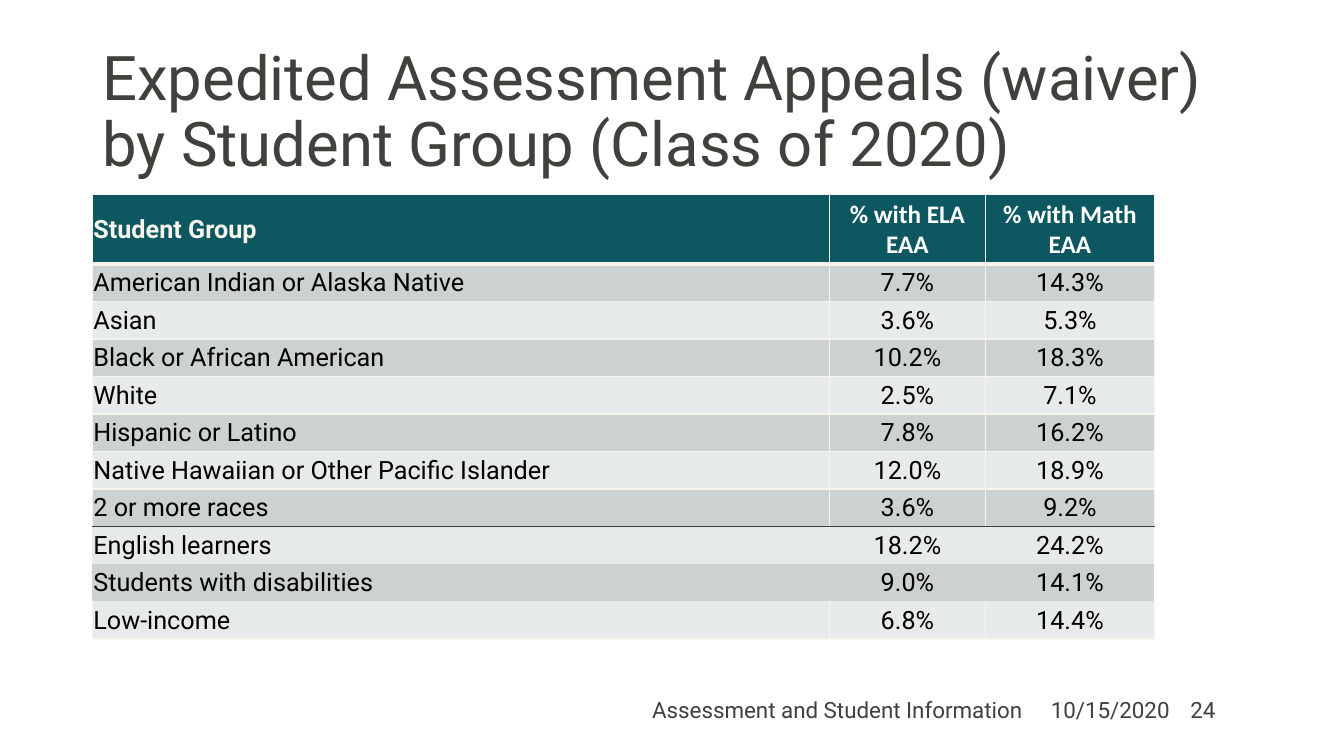
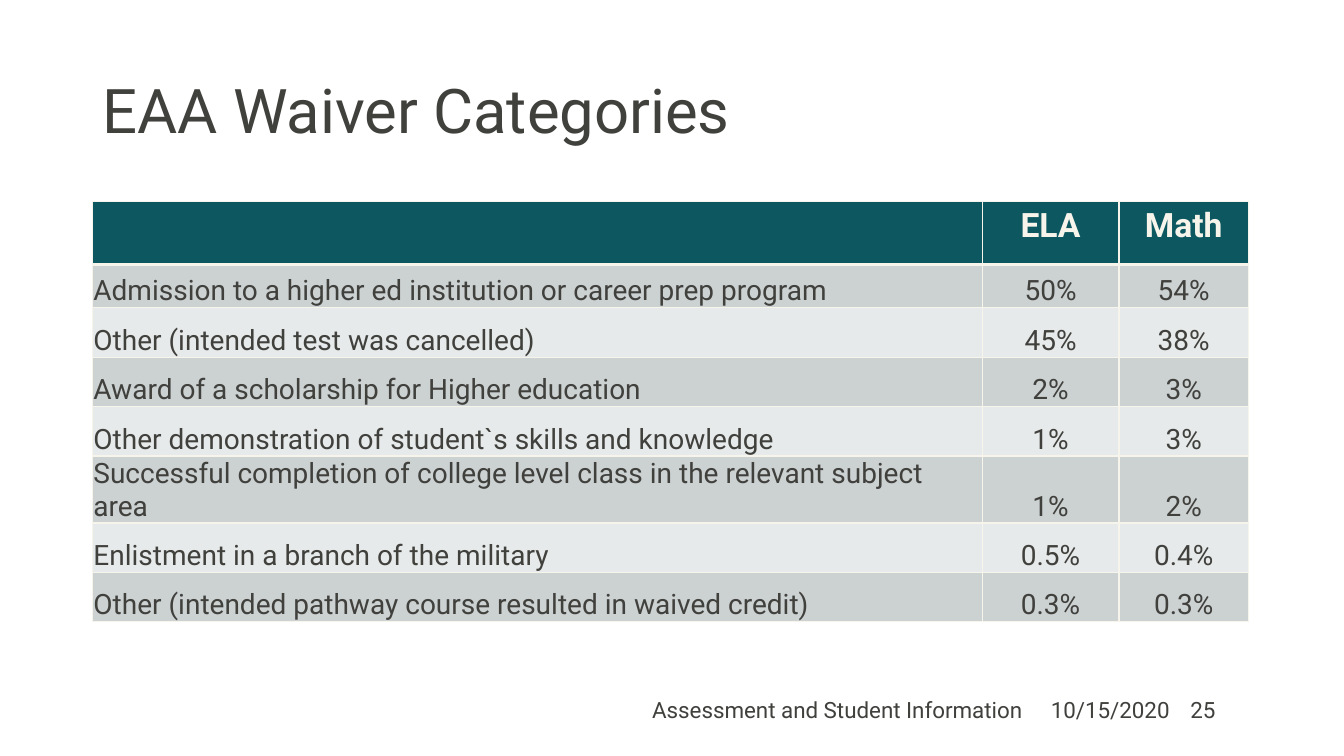
from dataclasses import dataclass
from typing import Optional

from lxml.etree import SubElement
from pptx import Presentation
from pptx.dml.color import RGBColor
from pptx.enum.text import MSO_ANCHOR, MSO_AUTO_SIZE, PP_ALIGN
from pptx.oxml.ns import qn
from pptx.util import Pt

INK = RGBColor(0x40, 0x40, 0x3D)
BLACK = RGBColor(0, 0, 0)
WHITE = RGBColor(0xFF, 0xFF, 0xFF)
CREAM = RGBColor(0xF7, 0xF5, 0xEB)
TEAL = RGBColor(0x0D, 0x57, 0x61)
BANDS = (RGBColor(0xCC, 0xD1, 0xD2), RGBColor(0xE7, 0xEA, 0xEA))
FONT = "Roboto"
LEFT = 66


@dataclass(frozen=True)
class Style:
    size: float
    color: RGBColor
    bold: bool = False
    font: str = FONT


@dataclass(frozen=True)
class Rule:
    width: float
    color: RGBColor = CREAM


@dataclass(frozen=True)
class Label:
    left: float
    width: float
    align: PP_ALIGN
    text: str


@dataclass(frozen=True)
class Grid:
    top: float
    cols: tuple[float, ...]
    heights: tuple[float, ...]
    rows: tuple[tuple[str, ...], ...]
    heads: tuple[Style, ...]
    body: Style
    anchor: MSO_ANCHOR
    tight: bool  # header cells share the narrow insets and anchor of the body
    split: Optional[int] = None  # first row below the dark rule


@dataclass(frozen=True)
class Page:
    number: int
    title: str
    grid: Grid


THIN, THICK, DARK = Rule(1), Rule(3), Rule(1, INK)
TITLE = Style(44, INK)
NOTE = Style(16, INK)
FOOTER = (
    Label(733, 120, PP_ALIGN.CENTER, "10/15/2020"),
    Label(279.4, 458, PP_ALIGN.RIGHT, "Assessment and Student Information"),
)

GROUPS = Grid(
    top=139,
    cols=(526.3, 111.8, 120.4),
    heights=(49.5,) + (26.8,) * 10,
    rows=(
        ("Student Group", "% with ELA EAA", "% with Math EAA"),
        ("American Indian or Alaska Native", "7.7%", "14.3%"),
        ("Asian", "3.6%", "5.3%"),
        ("Black or African American", "10.2%", "18.3%"),
        ("White", "2.5%", "7.1%"),
        ("Hispanic or Latino", "7.8%", "16.2%"),
        ("Native Hawaiian or Other Pacific Islander", "12.0%", "18.9%"),
        ("2 or more races", "3.6%", "9.2%"),
        ("English learners", "18.2%", "24.2%"),
        ("Students with disabilities", "9.0%", "14.1%"),
        ("Low-income", "6.8%", "14.4%"),
    ),
    heads=(Style(18, CREAM, True),) + (Style(18, WHITE, True, "Calibri"),) * 2,
    body=Style(18, BLACK),
    anchor=MSO_ANCHOR.MIDDLE,
    tight=True,
    split=8,
)
REASONS = Grid(
    top=144,
    cols=(635.6, 97.7, 92.6),
    heights=(45, 30.9, 35.3, 35.3, 35.3, 32.4, 35.3, 35.3),
    rows=(
        ("", "ELA", "Math"),
        ("Admission to a higher ed institution or career prep program", "50%", "54%"),
        ("Other (intended test was cancelled)", "45%", "38%"),
        ("Award of a scholarship for Higher education", "2%", "3%"),
        ("Other demonstration of student`s skills and knowledge", "1%", "3%"),
        ("Successful completion of college level class in the relevant subject area",
         "1%", "2%"),
        ("Enlistment in a branch of the military", "0.5%", "0.4%"),
        ("Other (intended pathway course resulted in waived credit)", "0.3%", "0.3%"),
    ),
    heads=(Style(24, CREAM, True),) * 3,
    body=Style(20, INK),
    anchor=MSO_ANCHOR.BOTTOM,
    tight=False,
)
PAGES = (
    Page(24, "Expedited Assessment Appeals (waiver) by Student Group (Class of 2020)",
         GROUPS),
    Page(25, "EAA Waiver Categories", REASONS),
)


def write(frame, text: str, style: Style, align: PP_ALIGN = PP_ALIGN.LEFT):
    """Put one styled run in the first paragraph and return that paragraph."""
    para = frame.paragraphs[0]
    para.alignment = align
    if text:
        run = para.add_run()
        run.text = text
        font = run.font
        font.name, font.size, font.bold = style.font, Pt(style.size), style.bold
        font.color.rgb = style.color
    return para


def place(shape, left: float, top: float, width: float, height: float) -> None:
    shape.left, shape.top = Pt(left), Pt(top)
    shape.width, shape.height = Pt(width), Pt(height)


def add_title(slide, text: str) -> None:
    title = slide.shapes.title
    place(title, LEFT, 28.8, 828, 104.4)
    frame = title.text_frame
    frame.word_wrap, frame.auto_size = True, MSO_AUTO_SIZE.NONE
    frame.vertical_anchor = MSO_ANCHOR.MIDDLE
    write(frame, text, TITLE).line_spacing = 0.9


def add_label(slide, label: Label) -> None:
    box = slide.shapes.add_textbox(Pt(label.left), Pt(492.5), Pt(label.width), Pt(28.8))
    frame = box.text_frame
    frame.word_wrap = True
    frame.vertical_anchor = MSO_ANCHOR.MIDDLE
    write(frame, label.text, NOTE, label.align)


def edge(cell, rules: dict[str, Optional[Rule]]) -> None:
    """Draw the cell borders; a side without a rule is left blank."""
    props = cell._tc.get_or_add_tcPr()
    for spot, side in enumerate("LRTB"):
        rule = rules[side]
        line = SubElement(props, qn(f"a:ln{side}"))
        if rule:
            line.set("w", str(Pt(rule.width)))
            fill = SubElement(line, qn("a:solidFill"))
            SubElement(fill, qn("a:srgbClr")).set("val", str(rule.color))
        else:
            line.set("w", "0")
            SubElement(line, qn("a:noFill"))
        props.insert(spot, line)


def row_rules(grid: Grid) -> list[Optional[Rule]]:
    """List the horizontal rules from the top of the table to its foot."""
    rules: list[Optional[Rule]] = [THIN, THICK] + [THIN] * (len(grid.rows) - 1)
    if grid.split:
        rules[grid.split] = DARK
        for row in range(grid.split + 1, len(grid.rows)):
            rules[row] = None
    return rules


def add_grid(slide, grid: Grid) -> None:
    count = len(grid.rows)
    table = slide.shapes.add_table(
        count, len(grid.cols), Pt(LEFT), Pt(grid.top),
        Pt(sum(grid.cols)), Pt(sum(grid.heights))).table
    table.horz_banding = False
    for col, width in zip(table.columns, grid.cols):
        col.width = Pt(width)
    rules = row_rules(grid)
    for r, (texts, height) in enumerate(zip(grid.rows, grid.heights)):
        table.rows[r].height = Pt(height)
        bare = grid.split is not None and grid.split <= r < count - 1
        side = None if bare else THIN
        for c, text in enumerate(texts):
            cell = table.cell(r, c)
            cell.fill.solid()
            cell.fill.fore_color.rgb = BANDS[(r - 1) % 2] if r else TEAL
            if r or grid.tight:
                cell.vertical_anchor = grid.anchor
                cell.margin_left = cell.margin_right = cell.margin_top = Pt(0.75)
                cell.margin_bottom = Pt(0)
            align = PP_ALIGN.CENTER if c else PP_ALIGN.LEFT
            write(cell.text_frame, text, grid.body if r else grid.heads[c], align)
            edge(cell, {"L": side, "R": side, "T": rules[r], "B": rules[r + 1]})


def main() -> None:
    deck = Presentation()
    deck.slide_width, deck.slide_height = Pt(960), Pt(540)
    for page in PAGES:
        slide = deck.slides.add_slide(deck.slide_layouts[5])
        add_title(slide, page.title)
        add_grid(slide, page.grid)
        number = Label(843.2, 50.4, PP_ALIGN.LEFT, str(page.number))
        for label in (*FOOTER, number):
            add_label(slide, label)
    deck.save("out.pptx")


if __name__ == "__main__":
    main()
